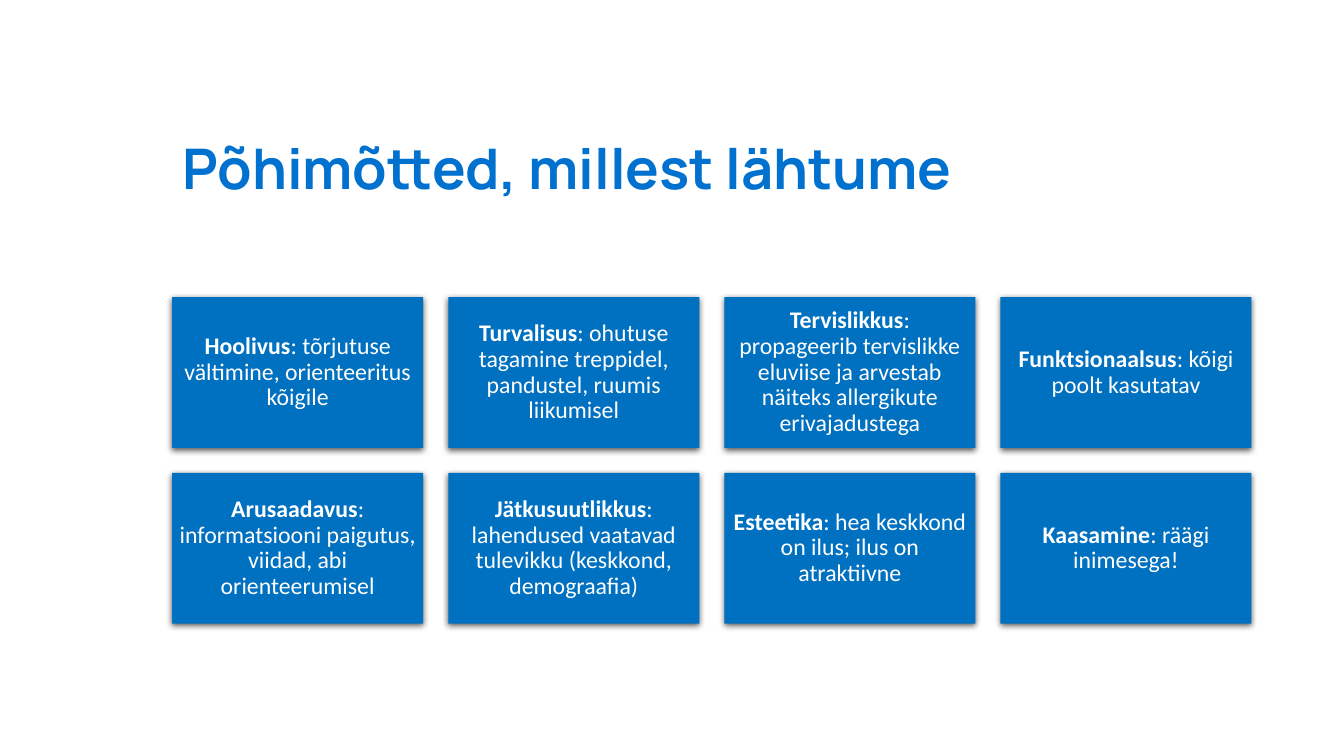
from lxml import etree
from pptx import Presentation
from pptx.dml.color import RGBColor
from pptx.enum.shapes import MSO_SHAPE
from pptx.enum.text import MSO_ANCHOR, MSO_AUTO_SIZE, PP_ALIGN
from pptx.oxml.ns import qn
from pptx.util import Cm, Pt

RECT = MSO_SHAPE.RECTANGLE
LEFT, CENTER = PP_ALIGN.LEFT, PP_ALIGN.CENTER
BOTTOM, MIDDLE = MSO_ANCHOR.BOTTOM, MSO_ANCHOR.MIDDLE
NO_AUTOFIT = MSO_AUTO_SIZE.NONE
TITLE_ONLY = 5

COLORS = {"title": "0071CE", "tile": "0070C0", "text": "FFFFFF", "shadow": "000000"}
TITLE_FONT = {"name": "Manrope", "size": Pt(40), "bold": True}
TERM_FONT = {"name": "Calibri", "size": Pt(17), "bold": True}
DETAIL_FONT = {**TERM_FONT, "bold": False}
INSET = Cm(0.18)
TILE_FRAME = {
    "word_wrap": True, "vertical_anchor": MIDDLE,
    "margin_left": INSET, "margin_right": INSET,
    "margin_top": INSET, "margin_bottom": INSET,
}
TITLE_FRAME = {"word_wrap": True, "vertical_anchor": BOTTOM, "auto_size": NO_AUTOFIT}

COLUMNS = 4
GAP_RATIO = 0.1     # gap between tiles as a share of tile width
HEIGHT_RATIO = 0.6  # tile height as a share of tile width

PRINCIPLES = [
    ("Hoolivus", "tõrjutuse vältimine, orienteeritus kõigile"),
    ("Turvalisus", "ohutuse tagamine treppidel, pandustel, ruumis liikumisel"),
    ("Tervislikkus", "propageerib tervislikke eluviise ja arvestab näiteks "
                     "allergikute erivajadustega"),
    ("Funktsionaalsus", "kõigi poolt kasutatav"),
    ("Arusaadavus", "informatsiooni paigutus, viidad, abi orienteerumisel"),
    ("Jätkusuutlikkus", "lahendused vaatavad tulevikku (keskkond, demograafia)"),
    ("Esteetika", "hea keskkond on ilus; ilus on atraktiivne"),
    ("Kaasamine", "räägi inimesega!"),
]


def rgb(key):
    return RGBColor.from_string(COLORS[key])


def apply(target, formats):
    for name, value in formats.items():
        setattr(target, name, value)


def add_run(p, text, font, color):
    r = p.add_run()
    r.text = text
    apply(r.font, font)
    r.font.color.rgb = rgb(color)


def add_shadow(sp):
    """Give the shape a soft shadow straight below it."""
    sp.shadow.inherit = False
    effects = sp._element.spPr.find(qn("a:effectLst"))
    outer = etree.SubElement(
        effects, qn("a:outerShdw"), blurRad=str(Pt(4.5)), dist=str(Pt(1.5)),
        dir="5400000", algn="ctr", rotWithShape="0")
    color = etree.SubElement(outer, qn("a:srgbClr"), val=COLORS["shadow"])
    etree.SubElement(color, qn("a:alpha"), val="63000")


def set_title(s, text, left, top, width, height):
    sp = s.shapes.title
    apply(sp, {"left": left, "top": top, "width": width, "height": height})
    tf = sp.text_frame
    apply(tf, TITLE_FRAME)
    p = tf.paragraphs[0]
    apply(p, {"alignment": LEFT, "line_spacing": 0.9})
    add_run(p, text, TITLE_FONT, "title")


def add_tile(s, term, detail, left, top, width, height):
    sp = s.shapes.add_shape(RECT, left, top, width, height)
    sp.fill.solid()
    sp.fill.fore_color.rgb = rgb("tile")
    sp.line.fill.background()
    add_shadow(sp)
    tf = sp.text_frame
    apply(tf, TILE_FRAME)
    p = tf.paragraphs[0]
    apply(p, {"alignment": CENTER, "line_spacing": 0.9})
    add_run(p, term, TERM_FONT, "text")
    add_run(p, f": {detail}", DETAIL_FONT, "text")


def add_tile_grid(s, principles, left, top, width):
    tile_w = int(width / (COLUMNS + (COLUMNS - 1) * GAP_RATIO))
    tile_h = int(tile_w * HEIGHT_RATIO)
    gap = int(tile_w * GAP_RATIO)
    for i, (term, detail) in enumerate(principles):
        row, col = divmod(i, COLUMNS)
        add_tile(s, term, detail, left + col * (tile_w + gap),
                 top + row * (tile_h + gap), tile_w, tile_h)


def main():
    prs = Presentation()
    prs.slide_width, prs.slide_height = Cm(33.87), Cm(19.05)
    s = prs.slides.add_slide(prs.slide_layouts[TITLE_ONLY])
    left, width = Cm(4.34), Cm(27.2)
    set_title(s, "Põhimõtted, millest lähtume", left, Cm(1.52), width, Cm(3.68))
    add_tile_grid(s, PRINCIPLES, left, Cm(7.49), width)
    prs.save("out.pptx")


if __name__ == "__main__":
    main()
